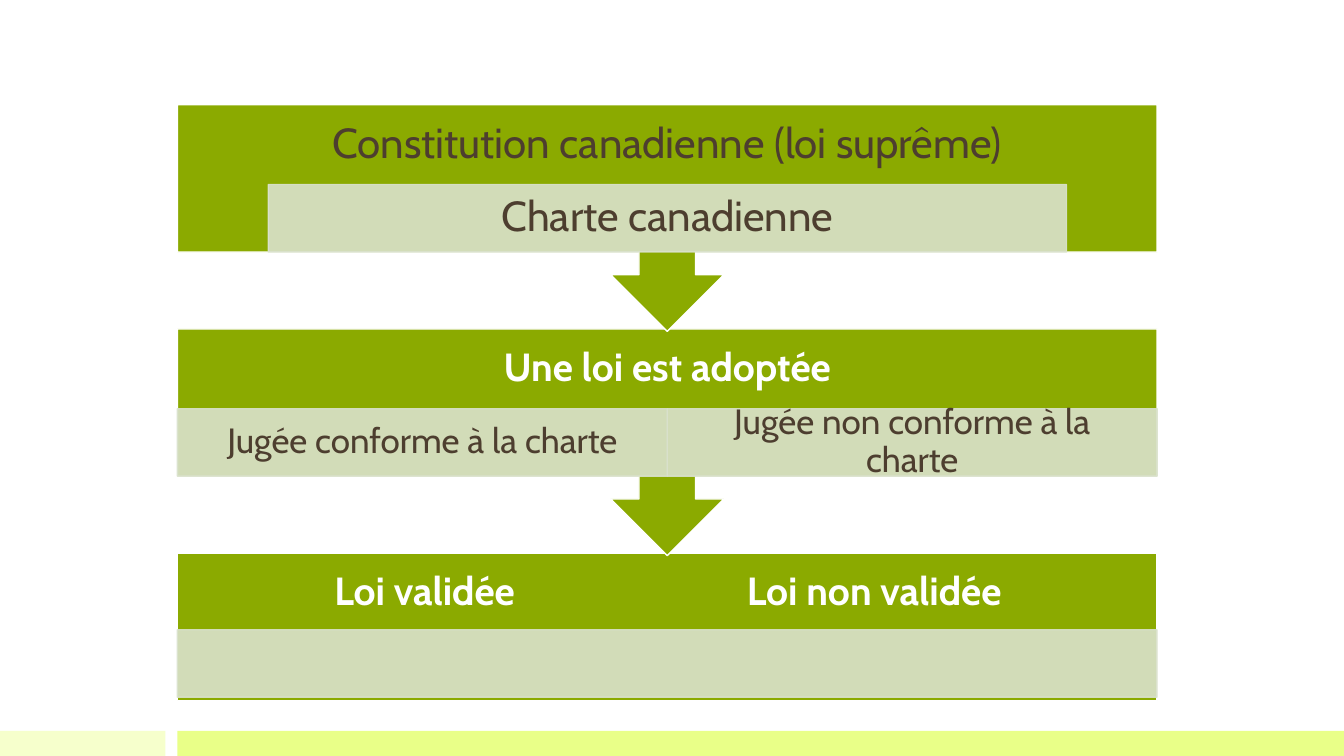
from dataclasses import dataclass

import pptx
import pptx.dml.color
import pptx.enum.shapes
import pptx.enum.text
import pptx.oxml.ns
import pptx.util
from lxml import etree
from pptx.dml.color import RGBColor
from pptx.enum.shapes import MSO_SHAPE
from pptx.util import Cm

FONT = "Cabin"
WHITE = RGBColor(0xFF, 0xFF, 0xFF)
GREEN = RGBColor(0x8B, 0xAA, 0x00)
SAGE = RGBColor(0xDA, 0xE2, 0xCC)
BROWN = RGBColor(0x4D, 0x3E, 0x2F)
PALE_LIME = RGBColor(0xF6, 0xFF, 0xCC)
LIME = RGBColor(0xE9, 0xFF, 0x88)

SLIDE_WIDTH, SLIDE_HEIGHT = 33.87, 19.05
PANEL_LEFT, PANEL_WIDTH = 4.47, 24.69
FIRST_TOP, STAGE_PITCH = 2.64, 5.65
CALLOUT_HEIGHT, LAST_HEIGHT = 5.71, 3.71
HEADING_HEIGHT, DETAIL_HEIGHT = 2.01, 1.7
BAND_HEIGHT = 0.63


@dataclass(frozen=True)
class Label:
    text: str
    left: float = PANEL_LEFT
    width: float = PANEL_WIDTH
    size: float = 28
    color: RGBColor = WHITE
    bold: bool = True
    is_title: bool = False


@dataclass(frozen=True)
class Stage:
    headings: tuple[Label, ...]
    details: tuple[Label, ...]
    detail_offset: float = HEADING_HEIGHT
    has_arrow: bool = True


def detail(text: str, left: float, width: float, size: float = 25) -> Label:
    return Label(text, left, width, size, BROWN, bold=False)


HALF_WIDTH = PANEL_WIDTH / 2
STAGES = (
    Stage(
        (Label("Constitution canadienne (loi suprême)", size=30, color=BROWN,
               bold=False, is_title=True),),
        (detail("Charte canadienne", 6.76, 20.12, size=30),),
    ),
    Stage(
        (Label("Une loi est adoptée"),),
        (
            detail("Jugée conforme à la charte", PANEL_LEFT, HALF_WIDTH),
            detail("Jugée non conforme à la charte", PANEL_LEFT + HALF_WIDTH, HALF_WIDTH),
        ),
    ),
    Stage(
        (
            Label("Loi validée", left=6.7, width=8),
            Label("Loi non validée", left=18.03, width=8),
        ),
        (detail("", PANEL_LEFT, PANEL_WIDTH),),
        detail_offset=1.93,
        has_arrow=False,
    ),
)


def write_text(shape, text: str, *, size: float, color: RGBColor, bold: bool) -> None:
    frame = shape.text_frame
    frame.word_wrap = True
    frame.auto_size = pptx.enum.text.MSO_AUTO_SIZE.NONE
    frame.vertical_anchor = pptx.enum.text.MSO_ANCHOR.MIDDLE
    frame.margin_left = frame.margin_right = Cm(0.48)
    frame.margin_top = frame.margin_bottom = Cm(0.08)
    paragraph = frame.paragraphs[0]
    paragraph.alignment = pptx.enum.text.PP_ALIGN.CENTER
    paragraph.line_spacing = 0.9
    run = paragraph.add_run()
    run.text = text
    run.font.name = FONT
    run.font.size = pptx.util.Pt(size)
    run.font.bold = bold
    run.font.color.rgb = color


def set_opacity(shape, percent: int) -> None:
    """Apply one opacity to both the fill and the outline."""
    for color in shape.element.spPr.iter(pptx.oxml.ns.qn("a:srgbClr")):
        alpha = etree.SubElement(color, pptx.oxml.ns.qn("a:alpha"))
        alpha.set("val", str(percent * 1000))


def add_panel(slide, kind: MSO_SHAPE, left: float, top: float, width: float,
              height: float, fill: RGBColor, line: RGBColor | None = None):
    shape = slide.shapes.add_shape(kind, Cm(left), Cm(top), Cm(width), Cm(height))
    shape.shadow.inherit = False
    shape.fill.solid()
    shape.fill.fore_color.rgb = fill
    if line is None:
        shape.line.fill.background()
    else:
        shape.line.color.rgb = line
        shape.line.width = pptx.util.Pt(1)
    return shape


def add_heading(slide, label: Label, top: float) -> None:
    if label.is_title:
        shape = slide.shapes.title
        slide.shapes.element.append(shape.element)  # bring in front of its panel
        shape.left, shape.top = Cm(label.left), Cm(top)
        shape.width, shape.height = Cm(label.width), Cm(HEADING_HEIGHT)
    else:
        shape = slide.shapes.add_textbox(
            Cm(label.left), Cm(top), Cm(label.width), Cm(HEADING_HEIGHT))
    write_text(shape, label.text, size=label.size, color=label.color, bold=label.bold)


def add_stage(slide, stage: Stage, top: float) -> None:
    kind = MSO_SHAPE.UP_ARROW_CALLOUT if stage.has_arrow else MSO_SHAPE.RECTANGLE
    height = CALLOUT_HEIGHT if stage.has_arrow else LAST_HEIGHT
    panel = add_panel(slide, kind, PANEL_LEFT, top, PANEL_WIDTH, height, GREEN, WHITE)
    if stage.has_arrow:
        panel.rotation = 180
    for heading in stage.headings:
        add_heading(slide, heading, top)
    for label in stage.details:
        box = add_panel(slide, MSO_SHAPE.RECTANGLE, label.left, top + stage.detail_offset,
                        label.width, DETAIL_HEIGHT, SAGE, SAGE)
        set_opacity(box, 90)
        if label.text:
            write_text(box, label.text, size=label.size, color=label.color, bold=label.bold)


def main() -> None:
    presentation = pptx.Presentation()
    presentation.slide_width, presentation.slide_height = Cm(SLIDE_WIDTH), Cm(SLIDE_HEIGHT)
    title_only = presentation.slide_layouts.get_by_name("Title Only")
    slide = presentation.slides.add_slide(title_only)

    band_top = SLIDE_HEIGHT - BAND_HEIGHT
    for left, right, color in ((0, 4.17, PALE_LIME), (PANEL_LEFT, SLIDE_WIDTH, LIME)):
        add_panel(slide, MSO_SHAPE.RECTANGLE, left, band_top, right - left, BAND_HEIGHT, color)

    # Bottom stage first, so that each arrow tip lies over the next panel.
    for index, stage in reversed(list(enumerate(STAGES))):
        add_stage(slide, stage, FIRST_TOP + index * STAGE_PITCH)

    presentation.save("out.pptx")


if __name__ == "__main__":
    main()
